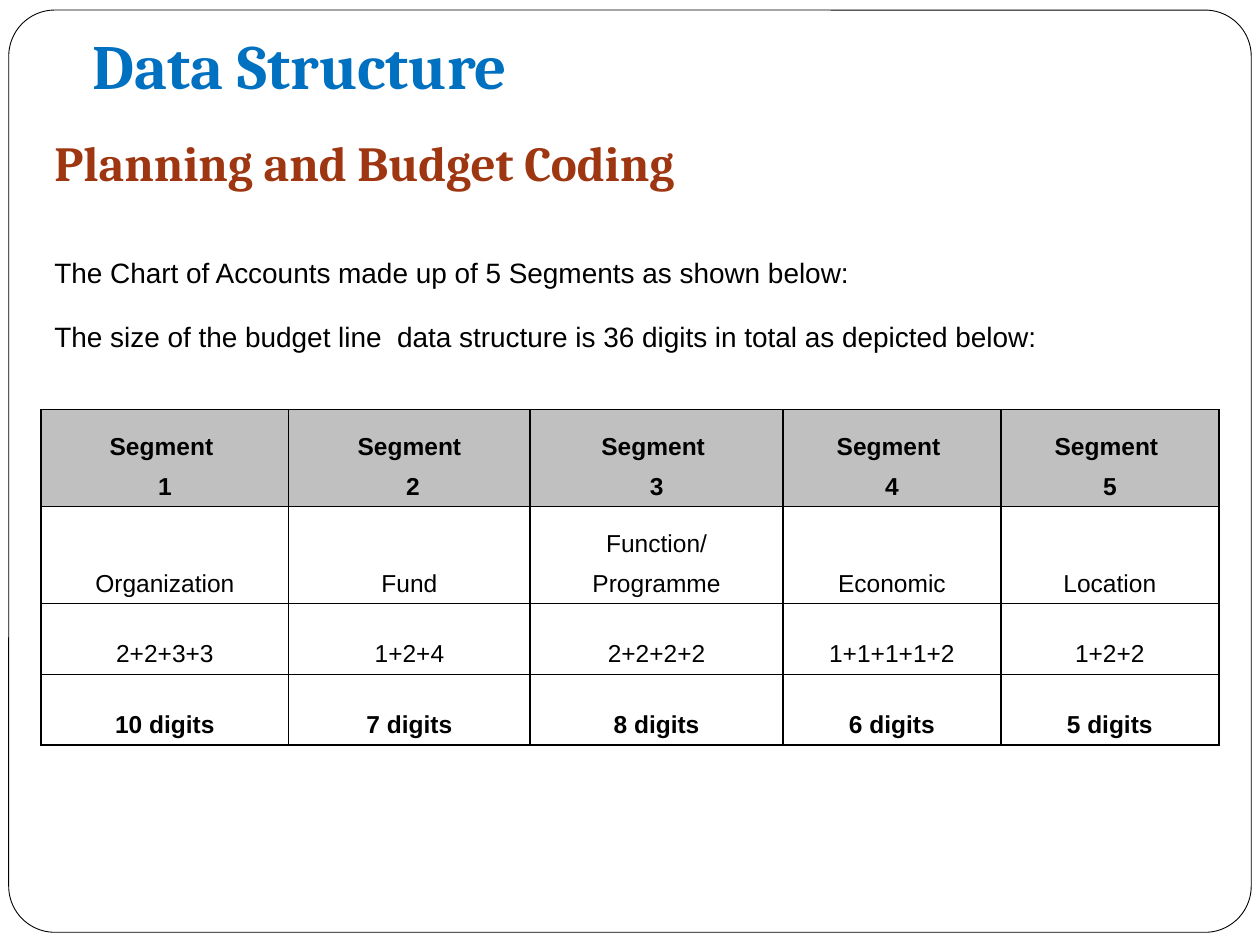
from pptx import Presentation
from pptx.dml.color import RGBColor
from pptx.enum.shapes import MSO_SHAPE
from pptx.enum.text import MSO_ANCHOR, PP_ALIGN
from pptx.oxml import parse_xml
from pptx.oxml.ns import nsdecls
from pptx.util import Pt


def tint(code):
    return RGBColor.from_string(code)


def write(frame, text, style, space=None):
    frame.text = text
    for para in frame.paragraphs:
        for key, val in (space or {}).items():
            setattr(para, key, val)
        for run in para.runs:
            run.font.color.rgb = tint(style["color"])
            for key in ("name", "size", "bold"):
                setattr(run.font, key, style[key])


deck = Presentation()
deck.slide_width, deck.slide_height = Pt(720), Pt(540)
slide = deck.slides.add_slide(deck.slide_layouts[6])

frame = slide.shapes.add_shape(
    MSO_SHAPE.ROUNDED_RECTANGLE, Pt(5), Pt(5.75), Pt(710), Pt(527))
frame.adjustments[0] = 0.05
frame.shadow.inherit = False
frame.fill.solid()
frame.fill.fore_color.rgb = tint("FFFFFF")
frame.line.color.rgb = tint("000000")
frame.line.width = Pt(0.5)

title = {"name": "Cambria", "size": Pt(36), "bold": True, "color": "0070C0"}
head = {**title, "size": Pt(28), "color": "9E3611"}
body = {"name": "Arial", "size": Pt(16), "bold": False, "color": "000000"}
gaps = {"space_before": Pt(9.6), "space_after": Pt(8)}
intro = ("The Chart of Accounts made up of 5 Segments as shown below:\n"
         "The size of the budget line  data structure is 36 digits in total as depicted below:")
texts = [
    ((46, 21, 612, 44.5), "Data Structure", title, {},
     {"vertical_anchor": MSO_ANCHOR.BOTTOM, "margin_bottom": Pt(7.2)}),
    ((24, 72, 678, 41), "Planning and Budget Coding", head, {}, {}),
    ((24, 142.5, 654.5, 62), intro, body, gaps, {}),
]
for area, text, style, space, props in texts:
    box = slide.shapes.add_textbox(*map(Pt, area)).text_frame
    box.word_wrap = True
    for key, val in props.items():
        setattr(box, key, val)
    write(box, text, style, space)

rows = [
    ["Segment \n1", "Segment\n 2", "Segment \n3", "Segment \n4", "Segment \n5"],
    ["Organization", "Fund", "Function/\nProgramme", "Economic", "Location"],
    ["2+2+3+3", "1+2+4", "2+2+2+2", "1+1+1+1+2", "1+2+2"],
    ["10 digits", "7 digits", "8 digits", "6 digits", "5 digits"],
]
wide = [141.5, 138, 144.5, 124.5, 124.5]
high = [55.5, 55.5, 40.4, 40.4]
grid = slide.shapes.add_table(
    len(rows), len(wide), Pt(23.5), Pt(234), Pt(sum(wide)), Pt(sum(high))).table
for col, size in zip(grid.columns, wide):
    col.width = Pt(size)
for row, size in zip(grid.rows, high):
    row.height = Pt(size)

space = {"alignment": PP_ALIGN.CENTER, "space_after": Pt(7)}
for i, row in enumerate(rows):
    style = {**body, "size": Pt(14), "bold": i in (0, 3)}
    for j, text in enumerate(row):
        cell = grid.cell(i, j)
        cell.vertical_anchor = MSO_ANCHOR.BOTTOM
        write(cell.text_frame, text, style, space)
        for side in ("lnL", "lnR", "lnT", "lnB"):
            cell._tc.get_or_add_tcPr().append(parse_xml(
                f'<a:{side} {nsdecls("a")} w="12700"><a:solidFill>'
                f'<a:srgbClr val="000000"/></a:solidFill></a:{side}>'))
        if i == 0:
            cell.fill.solid()
            cell.fill.fore_color.rgb = tint("C0C0C0")
        else:
            cell.fill.background()

deck.save("out.pptx")
